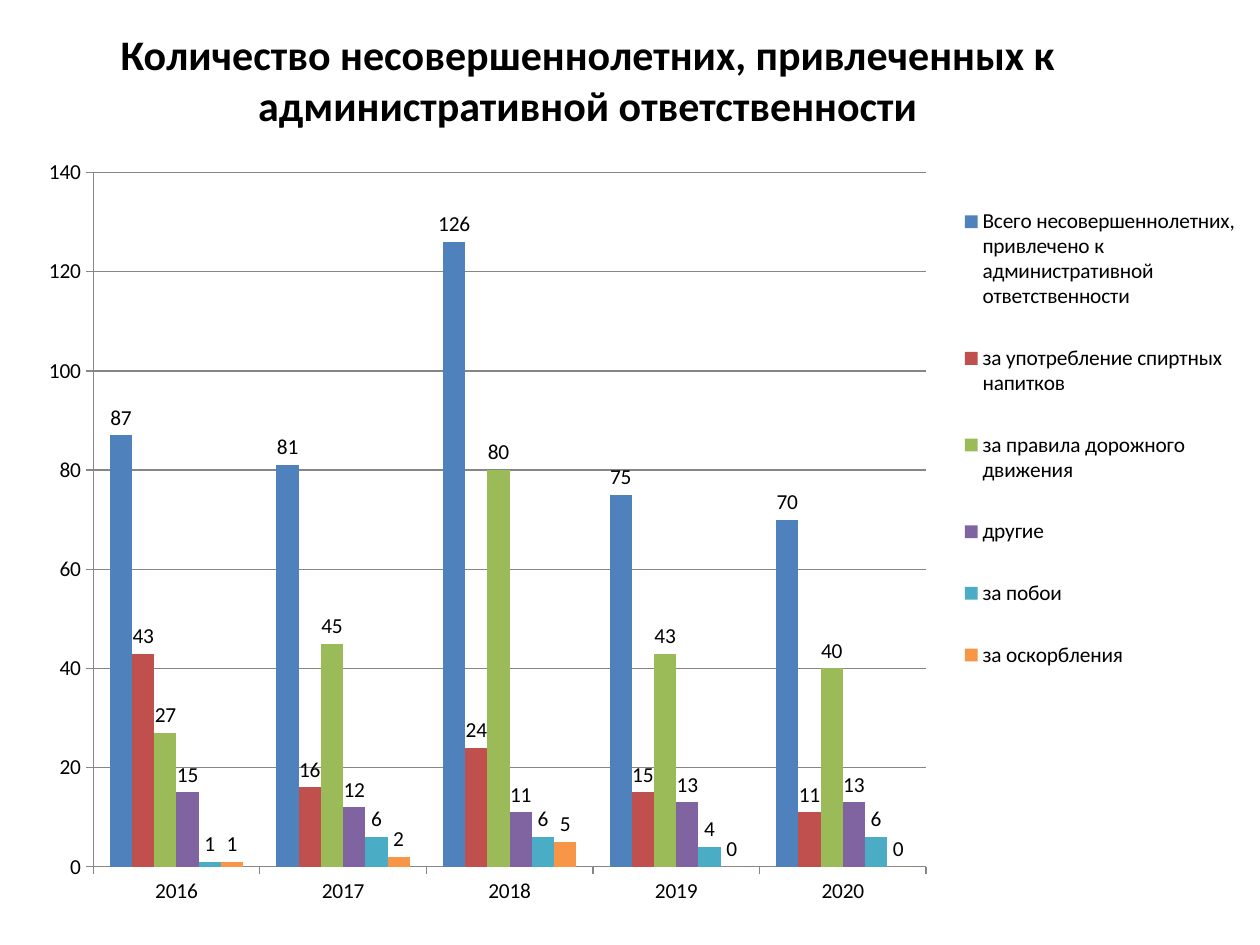
from dataclasses import dataclass
from typing import Any

from lxml.etree import SubElement
from pptx import Presentation
from pptx.chart.chart import Chart
from pptx.chart.data import CategoryChartData
from pptx.dml.color import RGBColor
from pptx.enum.chart import XL_CHART_TYPE, XL_LABEL_POSITION, XL_LEGEND_POSITION, XL_TICK_MARK
from pptx.enum.text import MSO_ANCHOR, MSO_AUTO_SIZE, PP_ALIGN
from pptx.oxml.ns import qn
from pptx.util import Inches, Pt

CELL = Inches(0.1)


@dataclass(frozen=True)
class Theme:
    font: str = "Calibri"
    ink: RGBColor = RGBColor.from_string("000000")
    rule: RGBColor = RGBColor.from_string("868686")
    heading: Pt = Pt(24)
    label: Pt = Pt(12.2)
    hairline: Pt = Pt(0.75)


@dataclass(frozen=True)
class Area:
    column: float
    row: float
    columns: float
    rows: float

    def frame(self) -> dict[str, int]:
        cells = dict(left=self.column, top=self.row, width=self.columns, height=self.rows)
        return {side: int(count * CELL) for side, count in cells.items()}


@dataclass(frozen=True)
class Offence:
    name: str
    counts: tuple[int, ...]
    color: str


THEME = Theme()
SLIDE = Area(0, 0, 100, 75)
HEADING = Area(0, 2.5, 93.3, 8.3)
CHART = Area(2, 11.5, 96.9, 61.5)
PLOT = Area(5.4, 2.2, 66.1, 55.1)
LEGEND = Area(73.7, 2.2, 23.2, 42.2)
TITLE = "Количество несовершеннолетних, привлеченных к административной ответственности"
YEARS = ("2016", "2017", "2018", "2019", "2020")
OFFENCES = (
    Offence("Всего несовершеннолетних, привлечено к административной ответственности",
            (87, 81, 126, 75, 70), "4F81BD"),
    Offence("за употребление спиртных напитков", (43, 16, 24, 15, 11), "C0504D"),
    Offence("за правила дорожного движения", (27, 45, 80, 43, 40), "9BBB59"),
    Offence("другие", (15, 12, 11, 13, 13), "8064A2"),
    Offence("за побои", (1, 6, 6, 4, 6), "4BACC6"),
    Offence("за оскорбления", (1, 2, 5, 0, 0), "F79646"),
)


def apply(target: Any, values: dict[str, Any]) -> None:
    for attribute, value in values.items():
        setattr(target, attribute, value)


def style_font(font: Any, size: Pt, bold: bool = False) -> None:
    apply(font, dict(name=THEME.font, size=size, bold=bold))
    font.color.rgb = THEME.ink


def style_rule(line: Any) -> None:
    line.color.rgb = THEME.rule
    line.width = THEME.hairline


def place_in_chart(parent: Any, area: Area, inner: bool = False) -> None:
    layout = parent.find(qn("c:layout"))
    if layout is None:
        layout = SubElement(parent, qn("c:layout"))
        parent.remove(layout)
        parent.insert(0 if inner else 1, layout)
    manual = SubElement(layout, qn("c:manualLayout"))
    settings = {"layoutTarget": "inner"} if inner else {}
    settings |= {
        "xMode": "edge",
        "yMode": "edge",
        "x": area.column / CHART.columns,
        "y": area.row / CHART.rows,
        "w": area.columns / CHART.columns,
        "h": area.rows / CHART.rows,
    }
    for tag, value in settings.items():
        SubElement(manual, qn(f"c:{tag}")).set("val", str(value))


def draw_heading(heading: Any) -> None:
    apply(heading, HEADING.frame())
    frame = heading.text_frame
    frame.text = TITLE
    apply(frame, dict(word_wrap=True, auto_size=MSO_AUTO_SIZE.NONE,
                      vertical_anchor=MSO_ANCHOR.BOTTOM))
    paragraph = frame.paragraphs[0]
    paragraph.alignment = PP_ALIGN.CENTER
    style_font(paragraph.runs[0].font, THEME.heading, bold=True)


def style_axes(chart: Chart) -> None:
    apply(chart.value_axis, dict(minimum_scale=0, maximum_scale=140, major_unit=20,
                                 has_major_gridlines=True))
    style_rule(chart.value_axis.major_gridlines.format.line)
    for axis in (chart.category_axis, chart.value_axis):
        apply(axis, dict(major_tick_mark=XL_TICK_MARK.OUTSIDE,
                         minor_tick_mark=XL_TICK_MARK.NONE))
        style_rule(axis.format.line)


def style_offences(chart: Chart) -> None:
    plot = chart.plots[0]
    apply(plot, dict(gap_width=150, overlap=0, vary_by_categories=False))
    for series, offence in zip(plot.series, OFFENCES):
        series.invert_if_negative = False
        series.format.fill.solid()
        series.format.fill.fore_color.rgb = RGBColor.from_string(offence.color)
        labels = series.data_labels
        apply(labels, dict(show_value=True, position=XL_LABEL_POSITION.OUTSIDE_END))
        style_font(labels.font, THEME.label)


def draw_chart(slide: Any) -> None:
    table = CategoryChartData()
    table.categories = YEARS
    for offence in OFFENCES:
        table.add_series(offence.name, offence.counts)
    chart = slide.shapes.add_chart(XL_CHART_TYPE.COLUMN_CLUSTERED,
                                   *CHART.frame().values(), table).chart
    apply(chart, dict(has_title=False, has_legend=True))
    style_font(chart.font, THEME.label)
    style_axes(chart)
    style_offences(chart)
    apply(chart.legend, dict(position=XL_LEGEND_POSITION.RIGHT, include_in_layout=False))
    place_in_chart(chart.element.find(f".//{qn('c:plotArea')}"), PLOT, inner=True)
    place_in_chart(chart.element.find(f".//{qn('c:legend')}"), LEGEND)


def main() -> None:
    deck = Presentation()
    size = SLIDE.frame()
    apply(deck, dict(slide_width=size["width"], slide_height=size["height"]))
    slide = deck.slides.add_slide(deck.slide_layouts[5])
    draw_heading(slide.shapes.title)
    draw_chart(slide)
    deck.save("out.pptx")


if __name__ == "__main__":
    main()
